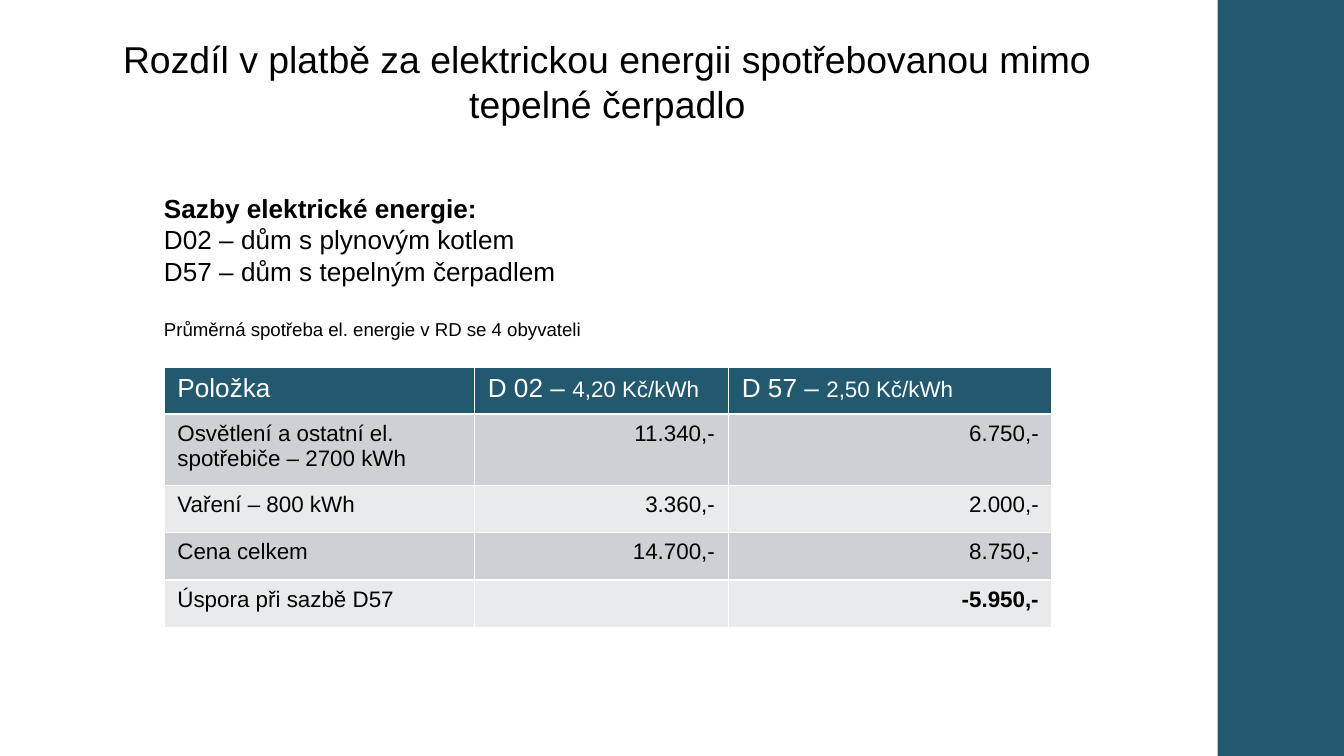
from lxml import etree
from pptx import Presentation
from pptx.dml.color import RGBColor
from pptx.enum.shapes import MSO_SHAPE
from pptx.enum.text import MSO_ANCHOR, MSO_AUTO_SIZE, PP_ALIGN
from pptx.oxml.ns import qn
from pptx.util import Inches, Pt

RECTANGLE = MSO_SHAPE.RECTANGLE
TOP = MSO_ANCHOR.TOP
NO_AUTOFIT = MSO_AUTO_SIZE.NONE
LEFT, CENTER, RIGHT = PP_ALIGN.LEFT, PP_ALIGN.CENTER, PP_ALIGN.RIGHT

TEAL = RGBColor(0x22, 0x59, 0x6F)
DARK_BAND = RGBColor(0xCD, 0xD1, 0xD5)
LIGHT_BAND = RGBColor(0xE8, 0xEA, 0xEB)
WHITE = RGBColor(0xFF, 0xFF, 0xFF)
BLACK = RGBColor(0, 0, 0)
FONT = "Arial"

SLIDE_WIDTH = Inches(10)
SLIDE_HEIGHT = SLIDE_WIDTH * 9 // 16

TITLE = "Rozdíl v platbě za elektrickou energii spotřebovanou mimo tepelné čerpadlo"
RATES = [
    ("Sazby elektrické energie:", {"size": 14, "bold": True}),
    ("D02 – dům s plynovým kotlem", {"size": 14}),
    ("D57 – dům s tepelným čerpadlem", {"size": 14}),
    ("Průměrná spotřeba el. energie v RD se 4 obyvateli", {"size": 10, "before": 17}),
]
HEADER = [("Položka", ""), ("D 02 – ", "4,20 Kč/kWh"), ("D 57 – ", "2,50 Kč/kWh")]
COSTS = [
    ("Osvětlení a ostatní el. spotřebiče – 2700 kWh", "11.340,-", "6.750,-"),
    ("Vaření – 800 kWh", "3.360,-", "2.000,-"),
    ("Cena celkem", "14.700,-", "8.750,-"),
    ("Úspora při sazbě D57", "", "-5.950,-"),
]
COLUMN_WIDTHS = [2.31, 1.89, 2.41]
ROW_SHARES = [2, 3, 2, 2, 2]
TABLE_HEIGHT = 1.94


def write(paragraph, text, size=12, color=BLACK, bold=False, align=LEFT, before=0):
    paragraph.alignment = align
    paragraph.space_before = Pt(before)
    if not text:
        etree.SubElement(paragraph._p, qn("a:endParaRPr"), sz=str(size * 100))
        return
    run = paragraph.add_run()
    run.text = text
    run.font.name = FONT
    run.font.size = Pt(size)
    run.font.bold = bold
    run.font.color.rgb = color


def place(placeholder, left, top, width, height):
    placeholder.left, placeholder.top = Inches(left), Inches(top)
    placeholder.width, placeholder.height = Inches(width), Inches(height)
    frame = placeholder.text_frame
    frame.word_wrap = True
    frame.auto_size = NO_AUTOFIT
    frame.vertical_anchor = TOP
    return frame


def add_side_band(slide):
    band = slide.shapes.add_shape(
        RECTANGLE, Inches(9.06), 0, Inches(0.94), SLIDE_HEIGHT)
    band.shadow.inherit = False
    band.fill.solid()
    band.fill.fore_color.rgb = TEAL
    band.line.fill.background()


def fill_rates(frame):
    frame.margin_left = frame.margin_top = 0
    frame.margin_right = frame.margin_bottom = 0
    for index, (text, style) in enumerate(RATES):
        paragraph = frame.add_paragraph() if index else frame.paragraphs[0]
        properties = paragraph._p.get_or_add_pPr()
        properties.set("marL", "0")
        properties.set("indent", "0")
        etree.SubElement(properties, qn("a:buNone"))
        write(paragraph, text, **style)


def style_cell(cell, fill):
    properties = cell._tc.get_or_add_tcPr()
    for side in "LRTB":
        border = etree.SubElement(properties, qn(f"a:ln{side}"), w=str(Pt(1)))
        solid = etree.SubElement(border, qn("a:solidFill"))
        etree.SubElement(solid, qn("a:srgbClr"), val=str(WHITE))
    cell.fill.solid()
    cell.fill.fore_color.rgb = fill


def add_cost_table(slide):
    table = slide.shapes.add_table(
        len(ROW_SHARES), len(COLUMN_WIDTHS), Inches(1.22), Inches(2.73),
        Inches(sum(COLUMN_WIDTHS)), Inches(TABLE_HEIGHT)).table
    for column, width in zip(table.columns, COLUMN_WIDTHS):
        column.width = Inches(width)
    for row, share in zip(table.rows, ROW_SHARES):
        row.height = Inches(TABLE_HEIGHT * share / sum(ROW_SHARES))

    for column, (label, price) in enumerate(HEADER):
        cell = table.cell(0, column)
        style_cell(cell, TEAL)
        paragraph = cell.text_frame.paragraphs[0]
        write(paragraph, label, size=14, color=WHITE)
        if price:
            write(paragraph, price, color=WHITE)

    for row, costs in enumerate(COSTS, start=1):
        for column, text in enumerate(costs):
            cell = table.cell(row, column)
            style_cell(cell, DARK_BAND if row % 2 else LIGHT_BAND)
            is_saving = row == len(COSTS) and column == 2
            write(cell.text_frame.paragraphs[0], text, bold=is_saving,
                  align=RIGHT if column else LEFT)


def main():
    presentation = Presentation()
    presentation.slide_width = SLIDE_WIDTH
    presentation.slide_height = SLIDE_HEIGHT
    slide = presentation.slides.add_slide(presentation.slide_layouts[1])
    add_side_band(slide)
    title_frame = place(slide.shapes.title, 0.55, 0.22, 7.94, 1.08)
    write(title_frame.paragraphs[0], TITLE, size=20, align=CENTER)
    add_cost_table(slide)
    fill_rates(place(slide.placeholders[1], 1.22, 1.43, 5.55, 1.15))
    presentation.save("out.pptx")


if __name__ == "__main__":
    main()
